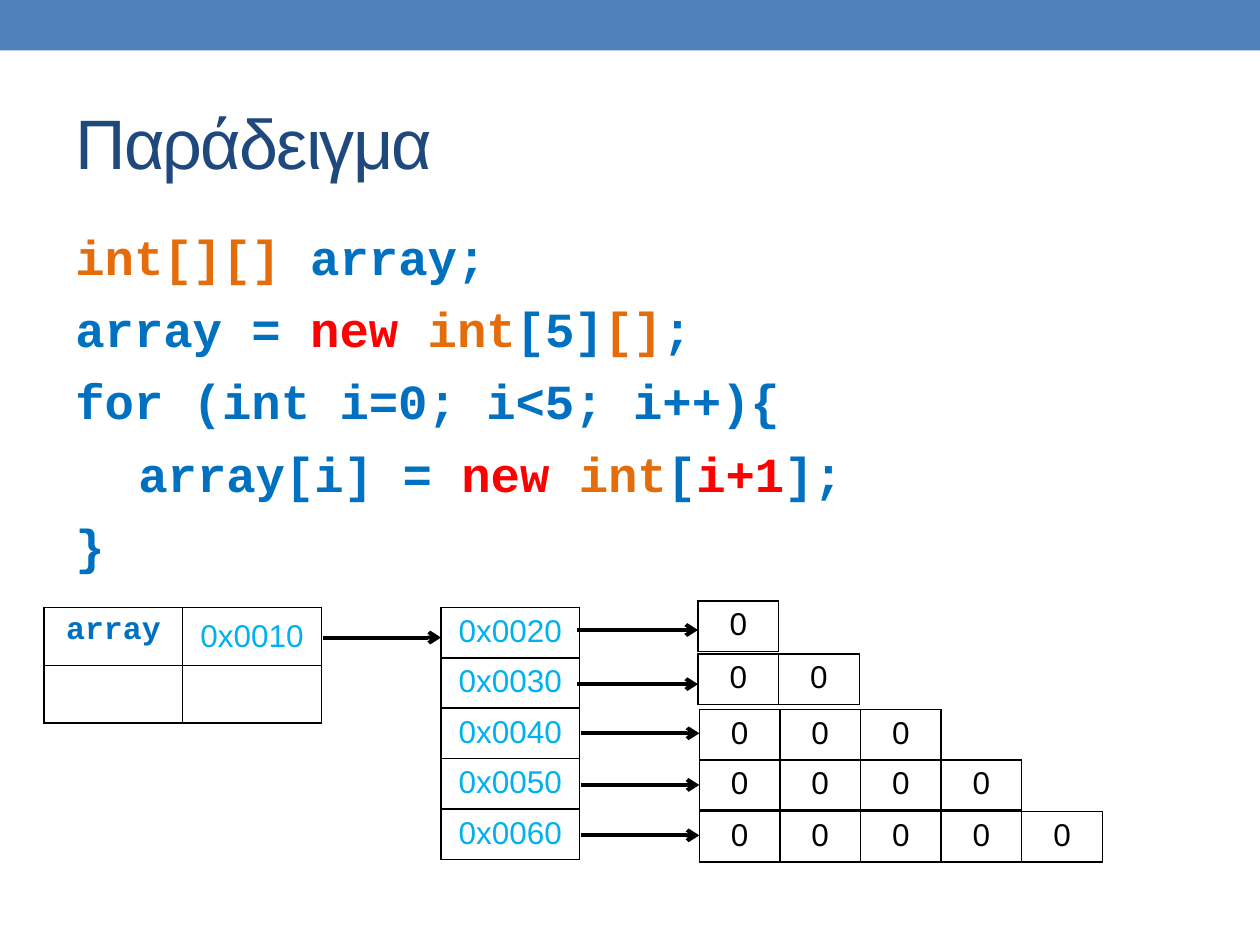
from dataclasses import dataclass

from lxml import etree
from pptx import Presentation
from pptx import util as u
from pptx.dml.color import RGBColor
from pptx.enum import shapes, text
from pptx.oxml.ns import qn


@dataclass(frozen=True)
class Theme:
    band: str = "4F81BD"
    title: str = "1F497D"
    code: str = "0070C0"
    type_name: str = "E46C0A"
    accent: str = "FF0000"
    address: str = "00B0F0"
    ink: str = "000000"
    sans: str = "Arial"
    mono: str = "Courier New"
    title_size: int = 40
    code_size: int = 28
    cell_size: int = 18
    border: float = 1
    arrow: float = 2.25


THEME = Theme()
CODE, TYPE, ACCENT = THEME.code, THEME.type_name, THEME.accent

CODE_LINES = [
    [("int[][] ", TYPE), ("array;", CODE)],
    [("array = ", CODE), ("new ", ACCENT), ("int", TYPE), ("[5]", CODE),
     ("[]", TYPE), (";", CODE)],
    [("for (int i=0; i<5; i++){", CODE)],
    [("\tarray[i] = ", CODE), ("new ", ACCENT), ("int", TYPE), ("[", CODE),
     ("i+1", ACCENT), ("];", CODE)],
    [("}", CODE)],
]
ADDRESSES = ["0x0020", "0x0030", "0x0040", "0x0050", "0x0060"]
# left and top of each inner array, then start and height of its arrow
INNER_ARRAYS = [
    (5.54, 4.77, 4.58, 5.0),
    (5.54, 5.19, 4.58, 5.43),
    (5.55, 5.63, 4.61, 5.82),
    (5.55, 6.03, 4.61, 6.23),
    (5.55, 6.44, 4.61, 6.63),
]
CELL_WIDTH, CELL_HEIGHT = 0.64, 0.38


def style_font(font, name, size, color=None, bold=False):
    font.name, font.size, font.bold = name, u.Pt(size), bold
    if color:
        font.color.rgb = RGBColor.from_string(color)


def add_band(page, left, top, width, height):
    band = page.shapes.add_shape(
        shapes.MSO_SHAPE.RECTANGLE, *map(u.Inches, (left, top, width, height)))
    band.shadow.inherit = False
    band.fill.solid()
    band.fill.fore_color.rgb = RGBColor.from_string(THEME.band)
    band.line.fill.background()


def add_frame(page, left, top, width, height, anchor):
    box = page.shapes.add_textbox(*map(u.Inches, (left, top, width, height)))
    frame = box.text_frame
    frame.word_wrap = True
    frame.vertical_anchor = anchor
    return frame


def add_title(page, left, top, width, height):
    frame = add_frame(page, left, top, width, height, text.MSO_ANCHOR.MIDDLE)
    para = frame.paragraphs[0]
    span = para.add_run()
    span.text = "Παράδειγμα"
    style_font(para.font, THEME.sans, THEME.title_size, THEME.title)
    style_font(span.font, THEME.sans, THEME.title_size, THEME.title)
    span.font._element.set("spc", "-100")


def add_code(page, left, top, width, height):
    frame = add_frame(page, left, top, width, height, text.MSO_ANCHOR.TOP)
    for index, line in enumerate(CODE_LINES):
        para = frame.add_paragraph() if index else frame.paragraphs[0]
        para.space_before = u.Pt(7.6)
        style_font(para.font, THEME.mono, THEME.code_size, bold=True)
        for words, color in line:
            span = para.add_run()
            span.text = words
            style_font(span.font, THEME.mono, THEME.code_size, color, True)


def border_cell(cell):
    properties = cell._tc.get_or_add_tcPr()
    for position, side in enumerate(("a:lnL", "a:lnR", "a:lnT", "a:lnB")):
        line = etree.Element(qn(side), w=str(u.Pt(THEME.border)))
        fill = etree.SubElement(line, qn("a:solidFill"))
        etree.SubElement(fill, qn("a:srgbClr"), val=THEME.ink)
        properties.insert(position, line)


def add_grid(page, left, top, cell_width, cell_height, rows, color):
    """Draw a bordered table of centred values; returns the table."""
    count, columns = len(rows), len(rows[0])
    table = page.shapes.add_table(
        count, columns, u.Inches(left), u.Inches(top),
        u.Inches(cell_width * columns), u.Inches(cell_height * count)).table
    table.first_row = table.horz_banding = False
    for column in table.columns:
        column.width = u.Inches(cell_width)
    for row, values in zip(table.rows, rows):
        row.height = u.Inches(cell_height)
        for cell, value in zip(row.cells, values):
            cell.fill.background()
            border_cell(cell)
            cell.text = value
            para = cell.text_frame.paragraphs[0]
            para.alignment = text.PP_ALIGN.CENTER
            style_font(para.font, THEME.sans, THEME.cell_size, color)
    return table


def add_arrow(page, start_x, start_y, end_x, end_y):
    arrow = page.shapes.add_connector(
        shapes.MSO_CONNECTOR.STRAIGHT,
        *map(u.Inches, (start_x, start_y, end_x, end_y)))
    arrow.line.width = u.Pt(THEME.arrow)
    arrow.line.color.rgb = RGBColor.from_string(THEME.ink)
    etree.SubElement(arrow.line._get_or_add_ln(), qn("a:tailEnd"), type="arrow")
    etree.SubElement(arrow._element.spPr, qn("a:effectLst"))


def add_variable(page, left, top):
    """Draw the array variable and the arrow to its row addresses."""
    rows = [["array", "0x0010"], ["", ""]]
    table = add_grid(page, left, top, 1.1, 0.46, rows, THEME.address)
    name = table.cell(0, 0).text_frame.paragraphs[0]
    style_font(name.font, THEME.mono, THEME.cell_size, THEME.code, True)
    table.cell(0, 1).vertical_anchor = text.MSO_ANCHOR.MIDDLE
    add_arrow(page, left + 2.21, top + 0.24, left + 3.15, top + 0.24)


def add_inner_arrays(page):
    for length, (left, top, start, level) in enumerate(INNER_ARRAYS, 1):
        add_arrow(page, start, level, left, level)
        add_grid(page, left, top, CELL_WIDTH, CELL_HEIGHT,
                 [["0"] * length], THEME.ink)


def main():
    deck = Presentation()
    deck.slide_width, deck.slide_height = u.Inches(10), u.Inches(7.5)
    page = deck.slides.add_slide(deck.slide_layouts[6])
    add_band(page, 0, 0, 10, 0.4)
    add_title(page, 0.5, 0.58, 9, 1.08)
    add_code(page, 0.5, 1.75, 9, 5.33)
    add_variable(page, 0.35, 4.82)
    add_grid(page, 3.5, 4.82, 1.1, CELL_HEIGHT,
             [[address] for address in ADDRESSES], THEME.address)
    add_inner_arrays(page)
    deck.save("out.pptx")


if __name__ == "__main__":
    main()
